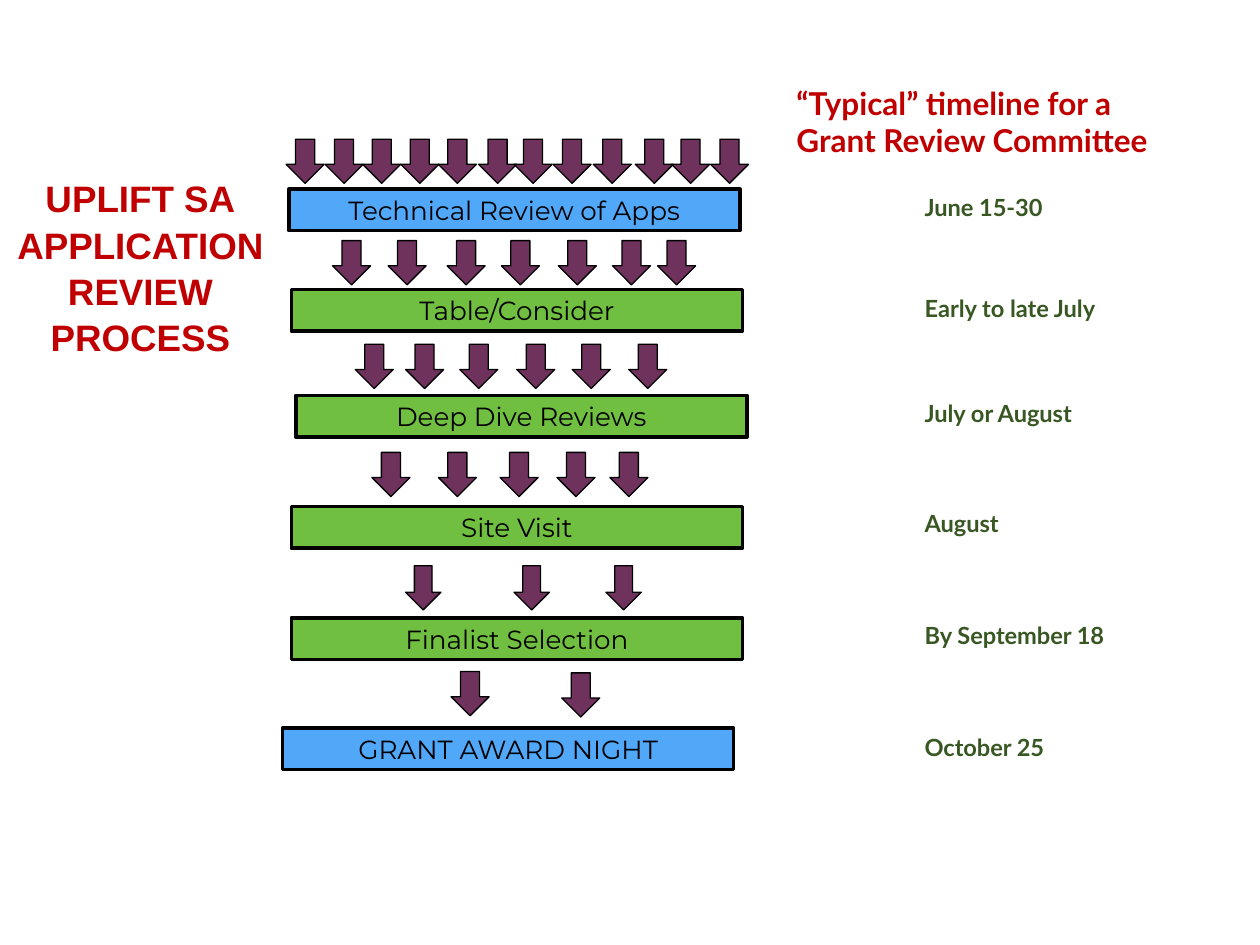
from pptx import Presentation
from pptx.dml.color import RGBColor
from pptx.enum import shapes, text
from pptx.util import Pt

RED = RGBColor(0xC0, 0x00, 0x00)
BLUE = RGBColor(0x51, 0xA8, 0xF9)
GREEN = RGBColor(0x70, 0xBF, 0x41)
DARK_GREEN = RGBColor(0x38, 0x57, 0x23)
PLUM = RGBColor(0x6E, 0x32, 0x5D)
BLACK = RGBColor(0, 0, 0)

ARROW_H = 25.25
BAR_W, BAR_H = 257.75, 23.75
DATE_X, DATE_H = 525.5, 22.25

# stage, fill, left, top, date, date top, date width
STAGES = [
    ("Technical Review of Apps", BLUE, 165, 108, "June 15-30", 107.25, 78.5),
    ("Table/Consider", GREEN, 166.5, 165.5, "Early to late July", 165, 115),
    ("Deep Dive Reviews", GREEN, 169, 226, "July or August", 224.75, 96.5),
    ("Site Visit", GREEN, 166.5, 289.5, "August", 288, 49),
    ("Finalist Selection", GREEN, 166.5, 353, "By September 18", 352, 115),
    ("GRANT AWARD NIGHT", BLUE, 161.5, 416, "October 25", 415.5, 77),
]

# top, arrow width, left edges: the applications entering each stage
ARROW_ROWS = [
    (79.5, 21.75, [163.5, 185.75, 207.25, 229, 250.5, 273.5,
                   293.75, 316, 339, 363, 383.75, 406]),
    (137.5, 21.75, [190, 221.75, 255.5, 286.5, 319, 350, 375.75]),
    (196.75, 21.75, [203, 231.75, 262.75, 295.25, 327, 359.25]),
    (258.5, 21.75, [212.5, 250.5, 285.75, 318.25, 348.5]),
    (323.25, 20.25, [231.75, 293.75, 346.25]),
    (383.75, 21.75, [257.75]),
    (384.5, 21.75, [321]),
]


def write(sp, lines, align, anchor, wrap, **font):
    """Fill a shape with one paragraph per line in a single font format."""
    tf = sp.text_frame
    frame = {"word_wrap": wrap, "vertical_anchor": anchor,
             "auto_size": text.MSO_AUTO_SIZE.SHAPE_TO_FIT_TEXT}
    for side in ("left", "top", "right", "bottom"):
        frame[f"margin_{side}"] = Pt(2.88)
    for name, value in frame.items():
        setattr(tf, name, value)
    for i, line in enumerate(lines):
        p = tf.add_paragraph() if i else tf.paragraphs[0]
        p.alignment = align
        r = p.add_run()
        r.text = line
        for name, value in font.items():
            if name == "color":
                r.font.color.rgb = value
            else:
                setattr(r.font, name, value)


def add_solid(kind, box, fill, line_width):
    sp = s.shapes.add_shape(kind, *map(Pt, box))
    sp.shadow.inherit = False
    sp.fill.solid()
    sp.fill.fore_color.rgb = fill
    sp.line.color.rgb = BLACK
    sp.line.width = Pt(line_width)
    return sp


prs = Presentation()
prs.slide_width, prs.slide_height = Pt(720), Pt(540)
s = prs.slides.add_slide(prs.slide_layouts[5])
LEFT, CENTER = text.PP_ALIGN.LEFT, text.PP_ALIGN.CENTER
TOP, MIDDLE = text.MSO_ANCHOR.TOP, text.MSO_ANCHOR.MIDDLE

title = s.shapes.title
title.left, title.top, title.width, title.height = map(Pt, (5.75, 96.5, 149, 107.25))
write(title, ["UPLIFT SA", "APPLICATION", "REVIEW", "PROCESS"], CENTER, TOP, False,
      size=Pt(21), name="Arial", bold=True, color=RED)
for p in title.text_frame.paragraphs:
    p.line_spacing = 1.05

heading = s.shapes.add_textbox(*map(Pt, (452.25, 33.75, 216.75, 71.25)))
write(heading, ["“Typical” timeline for a Grant Review Committee"], LEFT, MIDDLE, True,
      size=Pt(18), name="Lato", bold=True, color=RED)

for stage, fill, x, y, date, date_y, date_w in STAGES:
    bar = add_solid(shapes.MSO_SHAPE.RECTANGLE, (x, y, BAR_W, BAR_H), fill, 2)
    write(bar, [stage], CENTER, TOP, True,
          size=Pt(15), name="Montserrat", color=BLACK)
    label = s.shapes.add_textbox(*map(Pt, (DATE_X, date_y, date_w, DATE_H)))
    write(label, [date], LEFT, MIDDLE, False,
          size=Pt(13.5), name="Lato", bold=True, color=DARK_GREEN)

for y, width, lefts in ARROW_ROWS:
    for x in lefts:
        add_solid(shapes.MSO_SHAPE.DOWN_ARROW, (x, y, width, ARROW_H), PLUM, 0.75)

prs.save("out.pptx")
